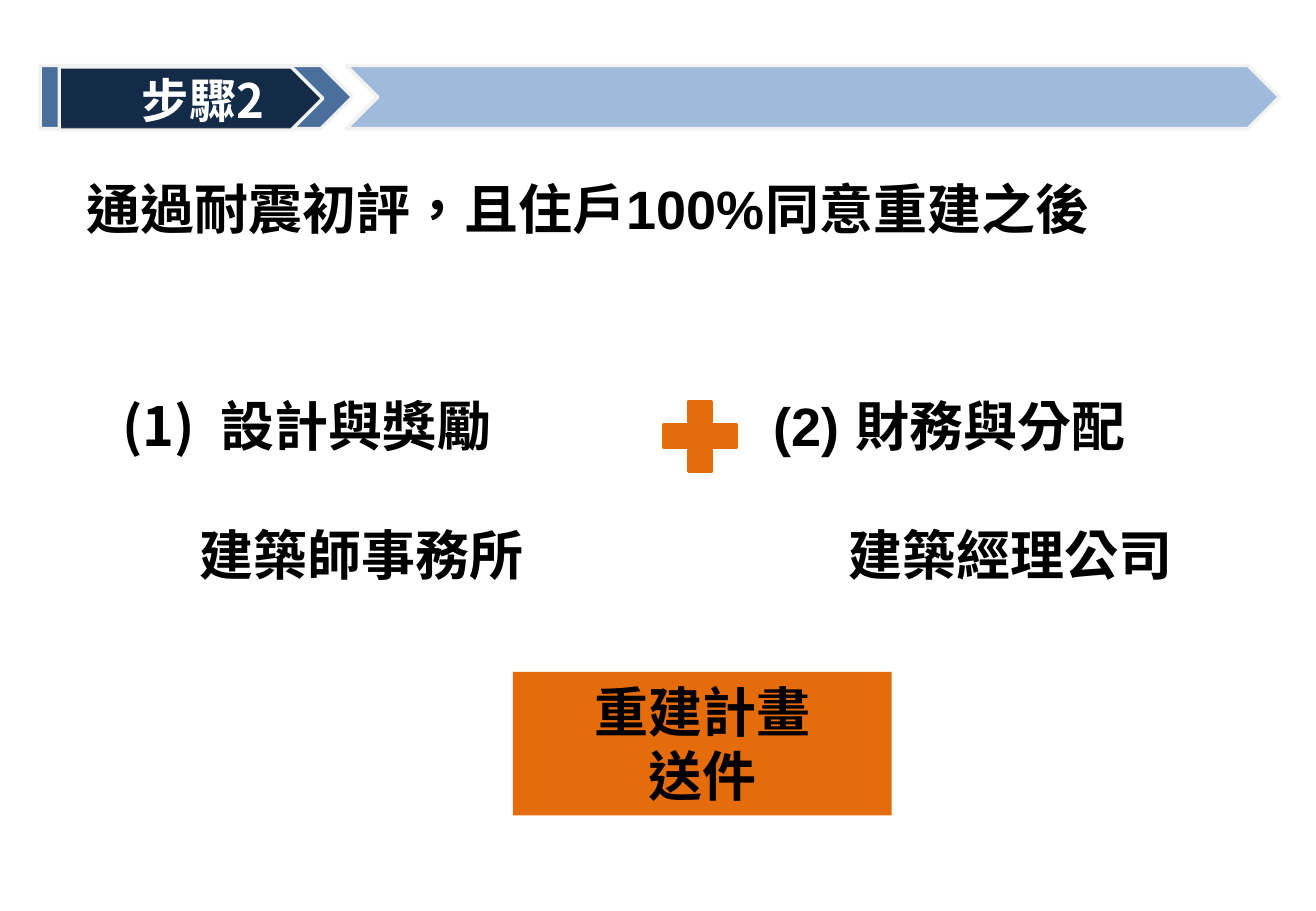
from lxml import etree
from pptx import Presentation
from pptx import util as u
from pptx.dml.color import RGBColor
from pptx.enum import lang, shapes, text
from pptx.oxml import ns

CJK_FONT = "Noto Sans CJK SC"
ORANGE = "E46C0A"


def color(value):
    return RGBColor.from_string(value)


def add_element(parent, tag, **attributes):
    return etree.SubElement(parent, ns.qn(tag), attributes)


class StepSlide:
    body = {"name": "Arial", "size": u.Pt(32), "bold": True,
            "language_id": lang.MSO_LANGUAGE_ID.TRADITIONAL_CHINESE}
    label = {**body, "name": CJK_FONT, "size": u.Pt(28)}

    def __init__(self, presentation):
        self.slide = presentation.slides.add_slide(presentation.slide_layouts[5])

    def fill_text(self, shape, lines, style=None, ink="000000",
                  margins=(0.25, 0.13, 0.25, 0.13), anchor=text.MSO_ANCHOR.TOP):
        frame = shape.text_frame
        left, top, right, bottom = (u.Cm(margin) for margin in margins)
        settings = {"word_wrap": True, "auto_size": text.MSO_AUTO_SIZE.NONE,
                    "vertical_anchor": anchor, "margin_left": left, "margin_top": top,
                    "margin_right": right, "margin_bottom": bottom}
        for name, value in settings.items():
            setattr(frame, name, value)
        for index, (line, alignment, space) in enumerate(lines):
            paragraph = frame.paragraphs[0] if index == 0 else frame.add_paragraph()
            paragraph.alignment = alignment
            paragraph.space_before = u.Pt(space)
            run = paragraph.add_run()
            run.text = line
            for name, value in (style or self.body).items():
                setattr(run.font, name, value)
            run.font.color.rgb = color(ink)
            add_element(run.font._element, "a:ea", typeface=CJK_FONT)
        return frame

    def title(self, box, line):
        shape = self.slide.shapes.title
        for name, value in zip(("left", "top", "width", "height"), box):
            setattr(shape, name, u.Cm(value))
        self.fill_text(shape, [(line, text.PP_ALIGN.LEFT, 0)])

    def text_box(self, box, lines, **options):
        shape = self.slide.shapes.add_textbox(*map(u.Cm, box))
        return self.fill_text(shape, lines, **options)

    def preset(self, kind, box, fill, line=None, opacity=100):
        shape = self.slide.shapes.add_shape(kind, *map(u.Cm, box))
        shape.shadow.inherit = False
        shape.fill.solid()
        shape.fill.fore_color.rgb = color(fill)
        if opacity < 100:
            solid = shape._element.spPr.find(ns.qn("a:solidFill"))
            add_element(solid[0], "a:alpha", val=str(opacity * 1000))
        if line:
            shape.line.color.rgb = color(line)
            shape.line.width = u.Pt(2)
        else:
            shape.line.fill.background()
        return shape

    def number(self, paragraph, indent):
        properties = paragraph._p.get_or_add_pPr()
        properties.set("marL", str(u.Cm(indent)))
        properties.set("indent", str(-u.Cm(indent)))
        add_element(properties, "a:buFont", typeface=CJK_FONT)
        add_element(properties, "a:buAutoNum", type="arabicParenBoth")


def main():
    presentation = Presentation()
    presentation.slide_width = u.Cm(27.51)
    presentation.slide_height = u.Cm(19.05)
    step = StepSlide(presentation)
    kinds = shapes.MSO_SHAPE
    left, center = text.PP_ALIGN.LEFT, text.PP_ALIGN.CENTER

    banner = [
        (kinds.PENTAGON, (0.84, 1.37, 6.53, 1.32), "376092"),
        (kinds.CHEVRON, (7.24, 1.37, 19.51, 1.32), "95B3D7"),
        (kinds.PENTAGON, (1.24, 1.4, 5.51, 1.32), "0F243E"),
    ]
    for kind, box, fill in banner:
        step.preset(kind, box, fill, line="F2F2F2", opacity=90)
    step.text_box((1.73, 1.32, 5.03, 1.5), [("步驟2", center, 0)], style=step.label,
                  ink="FFFFFF", margins=(0, 0.15, 0, 0.13), anchor=text.MSO_ANCHOR.MIDDLE)

    step.title((1.55, 3.53, 25.9, 1.63), "通過耐震初評，且住戶100%同意重建之後")

    design = step.text_box((2.31, 8.08, 10.52, 4.37),
                           [("設計與獎勵", left, 0), ("建築師事務所", center, 38)])
    step.number(design.paragraphs[0], 2.06)
    step.text_box((15.93, 8.08, 10.39, 4.37),
                  [("(2) 財務與分配", left, 0), ("建築經理公司", center, 38)])

    submission = step.preset(kinds.RECTANGLE, (10.72, 14.05, 7.92, 3), ORANGE)
    step.fill_text(submission, [("重建計畫", center, 0), ("送件", center, 0)])
    step.preset(kinds.MATH_PLUS, (13.61, 8.13, 2.06, 1.98), ORANGE, line=ORANGE)

    presentation.save("out.pptx")


if __name__ == "__main__":
    main()
